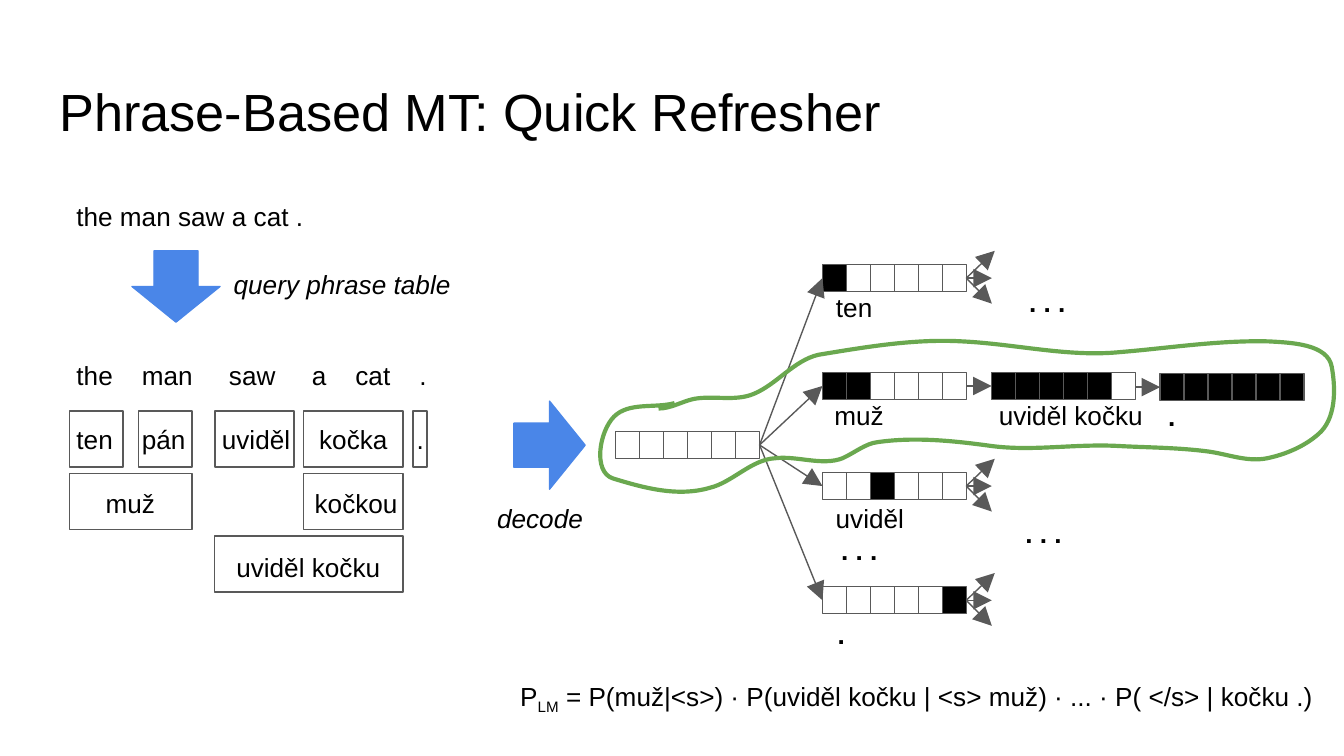
"""Builds a slide that recalls how phrase-based machine translation works."""
from lxml import etree
from pptx import Presentation
from pptx import util as u
from pptx.dml.color import RGBColor
from pptx.enum import shapes
from pptx.oxml import ns

BLACK = RGBColor(0x00, 0x00, 0x00)
GREY = RGBColor(0x59, 0x59, 0x59)
BLUE = RGBColor(0x4A, 0x86, 0xE8)
GREEN = RGBColor(0x6A, 0xA8, 0x4F)
CELL_WIDTH, CELL_HEIGHT, CELL_COUNT = 12.84, 14.4, 6
STRIP_WIDTH = CELL_WIDTH * CELL_COUNT


def write(paragraph, words, size=14, bold=False, italic=False, baseline=0):
    run = paragraph.add_run()
    run.text = words
    run.font.name = "Arial"
    run.font.size = u.Pt(size)
    run.font.bold = bold
    run.font.italic = italic
    run.font.color.rgb = BLACK
    if baseline:
        run.font._element.set("baseline", str(baseline * 1000))


class Sketch:
    def __init__(self, slide, outline=GREY, weight=0.75, inset=7.2):
        self.slide = slide
        self.outline = outline
        self.weight = weight
        self.inset = inset

    def frame(self, left, top, width, height):
        frame = self.slide.shapes.add_textbox(*map(u.Pt, (left, top, width, height))).text_frame
        frame.word_wrap = True
        frame.margin_left = frame.margin_right = u.Pt(self.inset)
        frame.margin_top = frame.margin_bottom = u.Pt(self.inset)
        return frame

    def label(self, left, top, width, height, *parts, **style):
        paragraph = self.frame(left, top, width, height).paragraphs[0]
        for part in parts:
            words, extra = part if isinstance(part, tuple) else (part, {})
            write(paragraph, words, **{**style, **extra})

    def tabbed(self, left, top, width, height, rows, gap):
        frame = self.frame(left, top, width, height)
        for index, (words, stops) in enumerate(rows):
            paragraph = frame.add_paragraph() if index else frame.paragraphs[0]
            paragraph.space_before = u.Pt(gap if index else 0)
            tabs = etree.SubElement(paragraph._p.get_or_add_pPr(), ns.qn("a:tabLst"))
            for stop in stops:
                etree.SubElement(tabs, ns.qn("a:tab"), pos=str(u.Pt(stop)), algn="l")
            write(paragraph, words)

    def paint(self, shape, fill=None, line=None, weight=None):
        shape.shadow.inherit = False
        if fill is None:
            shape.fill.background()
        else:
            shape.fill.solid()
            shape.fill.fore_color.rgb = fill
        shape.line.color.rgb = line or self.outline
        shape.line.width = u.Pt(weight or self.weight)

    def box(self, left, top, width, height, fill=None):
        box = self.slide.shapes.add_shape(
            shapes.MSO_SHAPE.RECTANGLE, *map(u.Pt, (left, top, width, height)))
        self.paint(box, fill)

    def block_arrow(self, left, top, rotation=0):
        arrow = self.slide.shapes.add_shape(
            shapes.MSO_SHAPE.DOWN_ARROW, *map(u.Pt, (left, top, 47.2, 38.2)))
        arrow.rotation = rotation
        self.paint(arrow, BLUE, BLUE)

    def coverage(self, left, top, covered=()):
        for index in range(CELL_COUNT):
            self.box(left + index * CELL_WIDTH, top, CELL_WIDTH, CELL_HEIGHT,
                     BLACK if index in covered else None)

    def arrow(self, x1, y1, x2, y2):
        arrow = self.slide.shapes.add_connector(
            shapes.MSO_CONNECTOR.STRAIGHT, *map(u.Pt, (x1, y1, x2, y2)))
        arrow.line.color.rgb = self.outline
        arrow.line.width = u.Pt(self.weight)
        etree.SubElement(arrow.line._get_or_add_ln(), ns.qn("a:tailEnd"),
                         type="triangle", w="lg", len="lg")
        etree.SubElement(arrow._element.spPr, ns.qn("a:effectLst"))

    def fan(self, x, y):
        for dx, dy in ((13.7, 0), (13.7, 13.7), (15.3, -14.6)):
            self.arrow(x, y, x + dx, y + dy)

    def loop(self, bounds, start, curves, colour, weight):
        left, top, width, height = map(u.Pt, bounds)
        builder = self.slide.shapes.build_freeform(*map(u.Pt, start), scale=1.0)
        builder.add_line_segments([(u.Pt(c[4]), u.Pt(c[5])) for c in curves], close=False)
        loop = builder.convert_to_shape()
        loop.left, loop.top, loop.width, loop.height = left, top, width, height
        outline = loop._element.spPr.find(".//" + ns.qn("a:path"))
        outline.set("w", str(width))
        outline.set("h", str(height))
        for child in list(outline):
            outline.remove(child)
        for tag, points in [("moveTo", start)] + [("cubicBezTo", c) for c in curves]:
            command = etree.SubElement(outline, ns.qn("a:" + tag))
            for x, y in zip(points[::2], points[1::2]):
                etree.SubElement(command, ns.qn("a:pt"),
                                 x=str(u.Pt(x) - left), y=str(u.Pt(y) - top))
        self.paint(loop, line=colour, weight=weight)


PHRASE_TABLE = (
    ("the\tman\tsaw\ta\tcat\t.", (35, 81.7, 126.1, 149.4, 183.7)),
    ("ten\tpán\tuviděl\tkočka\t.", (35, 77.9, 130, 182.2)),
    ("\tmuž\tkočkou", (15.6, 127.6)),
    ("\tuviděl kočku", (85.6,)),
)
PHRASE_BOXES = ((37.2, 0, 28.8), (74.2, 0, 28.8), (115.1, 0, 42.5), (162.7, 0, 53.3),
                (162.7, 1, 53.3), (115.1, 2, 100.8), (37.2, 1, 65.7), (221.3, 0, 7.4))
ROOT_LEFT, ROOT_TOP = 329.9, 231.2
FIRST_LEFT, SECOND_LEFT, THIRD_LEFT = 440.6, 531.2, 621.5
BEST_TOP = 199.6
FIRST_STEPS = ((141.8, (0,), True), (BEST_TOP, (0, 1), False),
               (253.2, (2,), True), (314.4, (5,), True))
BEST_PATH = (
    (350.6, 218.9, 337, 215.3, 329, 223.2),
    (321.1, 231.1, 317.5, 252.7, 328.3, 256.3),
    (344.9, 261.4, 362.9, 266.4, 380.2, 261.4),
    (392.4, 258.5, 402.5, 246.2, 415.4, 245.5),
    (427, 244.1, 440.6, 249.8, 451.4, 245.5),
    (457.9, 242.6, 463.7, 237.6, 470.2, 236.9),
    (490.3, 234, 511.2, 236.2, 531.4, 239),
    (553.7, 241.9, 576.7, 237.6, 599.8, 239),
    (615.6, 239.8, 631.4, 239.8, 647.3, 241.9),
    (658.1, 243.4, 668.2, 247.7, 679, 245.5),
    (689, 243.4, 699.1, 239, 706.3, 232.6),
    (715.7, 224.6, 715.7, 208.8, 713.5, 196.6),
    (711.4, 184.3, 691.9, 183.6, 679.7, 182.9),
    (653, 182.2, 626.4, 186.5, 600.5, 188.6),
    (572.4, 191.5, 544.3, 184.3, 515.5, 182.9),
    (490.3, 181.4, 464.4, 185.8, 438.5, 190.1),
    (425.5, 193, 416.2, 205.9, 403.9, 211),
    (393.8, 215.3, 382.3, 211.7, 371.5, 213.8),
    (365, 215.3, 359.3, 218.9, 352.8, 218.9),
)


def main():
    deck = Presentation()
    deck.slide_width, deck.slide_height = u.Pt(720), u.Pt(405)
    sketch = Sketch(deck.slides.add_slide(deck.slide_layouts[6]))

    sketch.label(24.8, 35.3, 671, 45.4, "Phrase-Based MT: Quick Refresher", size=28)
    sketch.label(33.8, 100.1, 138.2, 34.6, "the man saw a cat .")
    sketch.block_arrow(70.7, 134.4)
    sketch.label(118.1, 136.4, 138.2, 34.6, "query phrase table", italic=True)
    sketch.tabbed(33.9, 185.3, 285.8, 151.2, PHRASE_TABLE, gap=17.5)
    for left, row, width in PHRASE_BOXES:
        sketch.box(left, 220.1 + row * 33.5, width, 30.2)
    sketch.block_arrow(270.8, 219.4, rotation=270)
    sketch.label(259.2, 262.1, 70.6, 30.2, "decode", italic=True)

    middle = CELL_HEIGHT / 2
    sketch.coverage(ROOT_LEFT, ROOT_TOP)
    for top, covered, branches in FIRST_STEPS:
        sketch.coverage(FIRST_LEFT, top, covered)
        sketch.arrow(ROOT_LEFT + STRIP_WIDTH, ROOT_TOP + middle, FIRST_LEFT, top + middle)
        if branches:
            sketch.fan(FIRST_LEFT + STRIP_WIDTH, top + middle)
    for left, before, top, covered in ((SECOND_LEFT, FIRST_LEFT, BEST_TOP, range(5)),
                                       (THIRD_LEFT, SECOND_LEFT, 200.2, range(6))):
        sketch.coverage(left, top, covered)
        sketch.arrow(before + STRIP_WIDTH, top + middle, left, top + middle)

    for phrase, left, top, width, height in (
            ("ten", 440.8, 149, 38.2, 21.6), ("muž", 439.9, 206.6, 65.5, 21.6),
            ("uviděl", 440.6, 262.1, 70.6, 28.1), ("uviděl kočku", 528, 206.6, 100.8, 38.2)):
        sketch.label(left, top, width, height, phrase)
    for dots, left, top, width, height in (
            (".", 441.6, 324, 56.9, 21.6), (".", 618.7, 207.4, 100.8, 38.2),
            (". . .", 443.6, 279.2, 53.3, 14.4), (". . .", 544.3, 146.2, 53.3, 14.4),
            (". . .", 542.2, 270, 53.3, 14.4)):
        sketch.label(left, top, width, height, dots, bold=True)

    sketch.loop((321.1, 182.9, 393.8, 80.6), (361.4, 216), BEST_PATH, GREEN, 2.25)
    sketch.label(271.6, 357.1, 448.6, 34.6, "P", ("LM", {"baseline": -25}),
                 " = P(muž|<s>) · P(uviděl kočku | <s> muž) · ... · P( </s> | kočku .)")
    deck.save("out.pptx")


if __name__ == "__main__":
    main()
